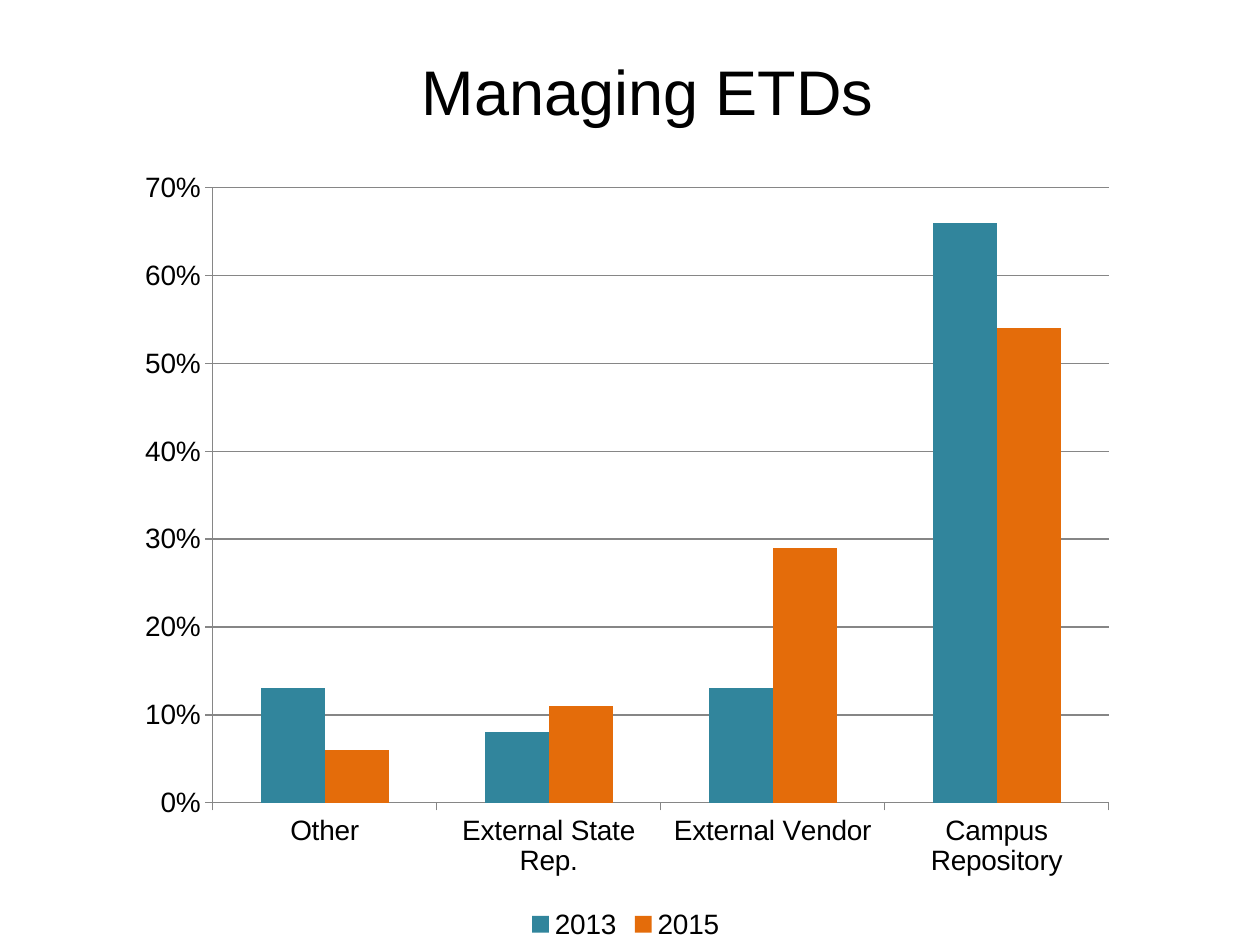
from dataclasses import dataclass

from lxml.etree import SubElement
from pptx import Presentation
from pptx.chart.data import CategoryChartData
from pptx.dml.color import RGBColor
from pptx.enum.chart import XL_CHART_TYPE, XL_LEGEND_POSITION, XL_TICK_MARK
from pptx.enum.text import MSO_ANCHOR, PP_ALIGN
from pptx.oxml.ns import qn
from pptx.slide import Slide
from pptx.util import Inches, Pt

WIDTH, HEIGHT = 10, 7.5
COLORS = {"text": "000000", "line": "868686", "2013": "31859C", "2015": "E46C0A"}
CATEGORIES = ["Other", "External State Rep.", "External Vendor", "Campus Repository"]
SERIES = {"2013": [0.13, 0.08, 0.13, 0.66], "2015": [0.06, 0.11, 0.29, 0.54]}


@dataclass
class SlideBuilder:
    """Holds the style and the current slide; lengths are shares of the slide."""

    slide: Slide
    font: str = "Arial"
    title_size: int = 36
    chart_size: int = 16

    def box(self, left, top, width, height):
        """Turn shares of the slide into lengths."""
        return [Inches(share * side) for share, side in
                zip((left, top, width, height), (WIDTH, HEIGHT) * 2)]

    def color(self, name):
        """Look up a colour by name."""
        return RGBColor.from_string(COLORS[name])

    def style_font(self, font, size):
        """Apply the common typeface and text colour."""
        font.name, font.size, font.bold = self.font, Pt(size), False
        font.color.rgb = self.color("text")

    def title(self, text, *area):
        """Move the title placeholder and fill it."""
        shape = self.slide.shapes.title
        shape.left, shape.top, shape.width, shape.height = self.box(*area)
        frame = shape.text_frame
        frame.vertical_anchor = MSO_ANCHOR.MIDDLE
        paragraph = frame.paragraphs[0]
        paragraph.alignment = PP_ALIGN.CENTER
        run = paragraph.add_run()
        run.text = text
        self.style_font(run.font, self.title_size)

    def column_chart(self, categories, series, plot_area, *area):
        """Add a clustered column chart with a percent axis and a legend."""
        data = CategoryChartData(number_format="0%")
        data.categories = categories
        for name, values in series.items():
            data.add_series(name, values)
        chart = self.slide.shapes.add_chart(
            XL_CHART_TYPE.COLUMN_CLUSTERED, *self.box(*area), data).chart
        self.style_font(chart.font, self.chart_size)
        chart.has_title = False
        chart.has_legend = True
        chart.legend.position = XL_LEGEND_POSITION.BOTTOM
        chart.legend.include_in_layout = False
        plot = chart.plots[0]
        plot.gap_width, plot.overlap, plot.vary_by_categories = 75, 0, False
        plot.gap_width = 150
        for column in plot.series:
            column.format.fill.solid()
            column.format.fill.fore_color.rgb = self.color(column.name)
        self.style_axes(chart)
        self.place_plot(chart, plot_area)

    def style_axes(self, chart):
        """Set the scale, ticks and lines of both axes."""
        axis = chart.value_axis
        axis.minimum_scale, axis.maximum_scale, axis.major_unit = 0, 0.7, 0.1
        axis.tick_labels.number_format = "0%"
        axis.tick_labels.number_format_is_linked = False
        axis.has_major_gridlines = True
        lines = [axis.major_gridlines.format.line]
        for each in (axis, chart.category_axis):
            each.major_tick_mark = XL_TICK_MARK.OUTSIDE
            each.minor_tick_mark = XL_TICK_MARK.NONE
            lines.append(each.format.line)
        for line in lines:
            line.color.rgb = self.color("line")
            line.width = Pt(0.75)

    def place_plot(self, chart, plot_area):
        """Fix the inner plot area as shares of the chart."""
        plot_element = chart.plots[0]._element.getparent()
        for old in plot_element.findall(qn("c:layout")):
            plot_element.remove(old)
        layout = SubElement(plot_element, qn("c:layout"))
        plot_element.insert(0, layout)
        manual = SubElement(layout, qn("c:manualLayout"))
        settings = {"layoutTarget": "inner", "xMode": "edge", "yMode": "edge",
                    **dict(zip("xywh", plot_area))}
        for tag, value in settings.items():
            SubElement(manual, qn(f"c:{tag}")).set("val", str(value))


def main():
    """Build and save the slide."""
    presentation = Presentation()
    presentation.slide_width, presentation.slide_height = Inches(WIDTH), Inches(HEIGHT)
    title_only = presentation.slide_layouts[5]
    builder = SlideBuilder(presentation.slides.add_slide(title_only))
    builder.column_chart(CATEGORIES, SERIES, (0.09, 0.04, 0.89, 0.78),
                         0.097, 0.165, 0.799, 0.835)
    builder.title("Managing ETDs", 0.225, 0.048, 0.578, 0.095)
    presentation.save("out.pptx")


if __name__ == "__main__":
    main()
